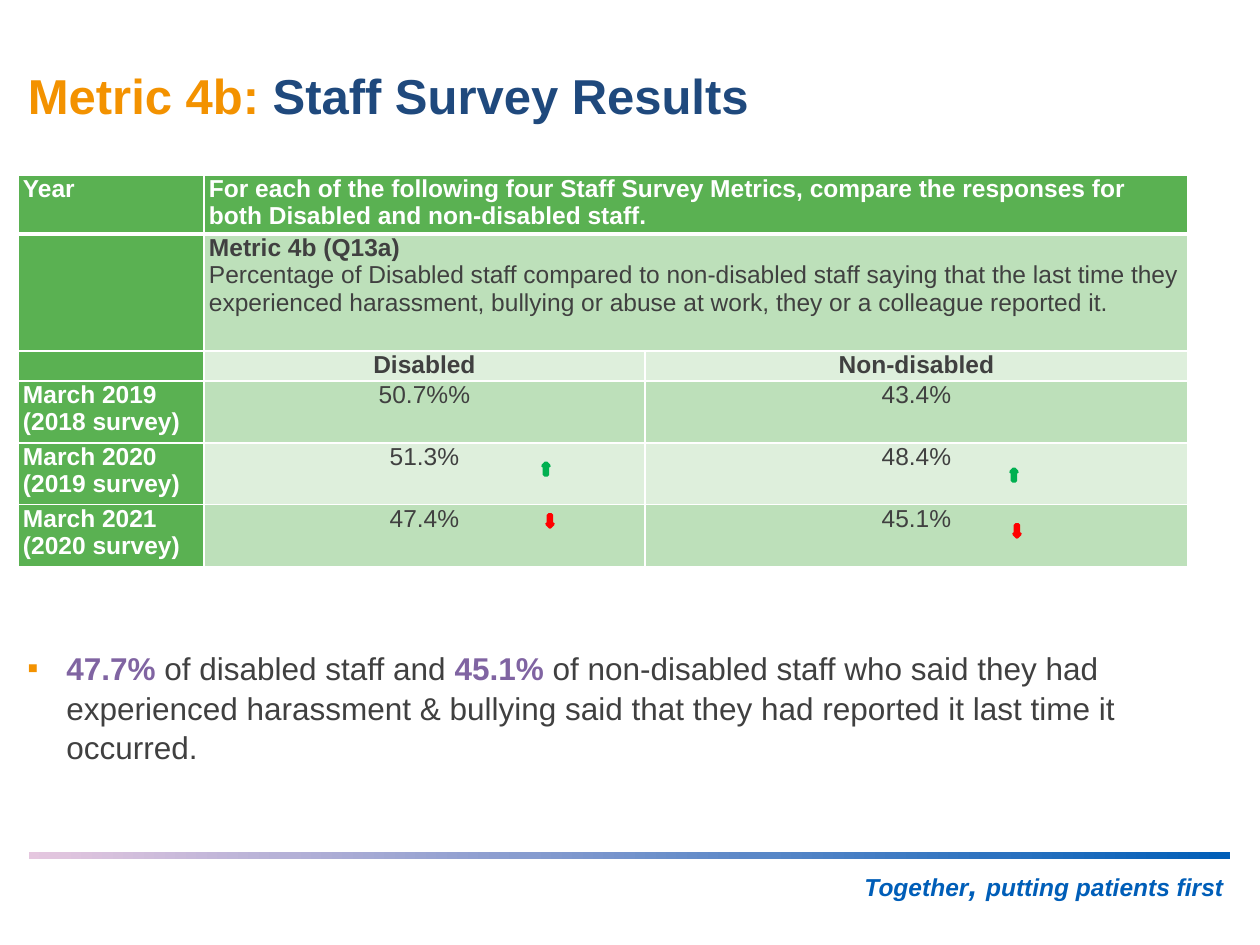
from dataclasses import dataclass
from lxml.etree import SubElement
from pptx import Presentation
from pptx.dml.color import RGBColor
from pptx.enum.shapes import MSO_SHAPE
from pptx.enum.text import MSO_ANCHOR, PP_ALIGN
from pptx.oxml.ns import qn
from pptx.util import Pt

SCALE = 914400 / 126  # EMU in one px


def px(n: int) -> int:
    return round(n * SCALE)


@dataclass(frozen=True)
class Theme:
    font: str = "Arial"
    white: str = "FFFFFF"
    text: str = "404040"
    orange: str = "F39200"
    navy: str = "1F497D"
    purple: str = "8064A2"
    blue: str = "005EB8"
    pink: str = "E5C7DF"
    dark: str = "5AB152"
    mid: str = "BDE0BA"
    pale: str = "DEEFDC"
    up: str = "00B050"
    down: str = "FF0000"
    title: int = 28
    body: int = 18
    small: int = 14


T = Theme()


@dataclass(frozen=True)
class Run:
    text: str
    color: str = T.text
    size: int = T.small
    bold: bool = False
    slant: bool = False


@dataclass(frozen=True)
class Box:
    left: int
    top: int
    width: int
    height: int

    def emu(self) -> list[int]:
        return [px(n) for n in (self.left, self.top, self.width, self.height)]


@dataclass(frozen=True)
class Trend:
    left: int
    top: int
    rise: bool


@dataclass(frozen=True)
class Row:
    height: int
    fill: str
    head: tuple[str, ...]
    cells: tuple[tuple[Run, ...], ...]  # one run per paragraph
    center: bool = True


def rgb(code: str) -> RGBColor:
    return RGBColor.from_string(code)


def add_runs(para, runs: list[Run]) -> None:
    for item in runs:
        run = para.add_run()
        run.text = item.text
        font = run.font
        font.name, font.size = T.font, Pt(item.size)
        font.bold, font.italic = item.bold, item.slant
        font.color.rgb = rgb(item.color)


def add_text(slide, box: Box, runs: list[Run]):
    frame = slide.shapes.add_textbox(*box.emu()).text_frame
    frame.word_wrap = True
    add_runs(frame.paragraphs[0], runs)
    return frame


def add_bullet(para, indent: int) -> None:
    props = para._p.get_or_add_pPr()
    props.set("marL", str(px(indent)))
    props.set("indent", str(-px(indent)))
    SubElement(SubElement(props, qn("a:buClr")), qn("a:srgbClr"), val=T.orange)
    SubElement(props, qn("a:buFont"), typeface=T.font)
    SubElement(props, qn("a:buChar"), char="▪")


def add_trend(slide, trend: Trend) -> None:
    kind = MSO_SHAPE.UP_ARROW if trend.rise else MSO_SHAPE.DOWN_ARROW
    color = rgb(T.up if trend.rise else T.down)
    box = Box(trend.left, trend.top, 6, 12)
    arrow = slide.shapes.add_shape(kind, *box.emu())
    arrow.shadow.inherit = False
    arrow.fill.solid()
    arrow.fill.fore_color.rgb = color
    arrow.line.color.rgb = color
    arrow.line.width = Pt(2)


def set_edges(cell, top: int, bottom: int) -> None:
    props = cell._tc.get_or_add_tcPr()
    for side, width in (("L", 1), ("R", 1), ("T", top), ("B", bottom)):
        line = SubElement(props, qn(f"a:ln{side}"), w=str(Pt(width)))
        SubElement(SubElement(line, qn("a:solidFill")), qn("a:srgbClr"), val=T.white)


def fill_cell(cell, runs: tuple[Run, ...], color: str, center: bool) -> None:
    cell.margin_left = cell.margin_right = px(5)
    cell.margin_top = cell.margin_bottom = 0
    cell.fill.solid()
    cell.fill.fore_color.rgb = rgb(color)
    frame = cell.text_frame
    frame.paragraphs[0].font.size = Pt(T.small)
    for i, run in enumerate(runs):
        para = frame.add_paragraph() if i else frame.paragraphs[0]
        para.alignment = PP_ALIGN.CENTER if center else PP_ALIGN.LEFT
        add_runs(para, [run])


def add_grid(slide, left: int, top: int, cols: list[int], rows: list[Row]) -> None:
    box = Box(left, top, sum(cols), sum(row.height for row in rows))
    table = slide.shapes.add_table(len(rows), len(cols), *box.emu()).table
    for col, width in zip(table.columns, cols):
        col.width = px(width)
    for r, row in enumerate(rows):
        table.rows[r].height = px(row.height)
        head = tuple(Run(line, T.white, bold=True) for line in row.head)
        parts = (head, *row.cells)
        for c in range(len(cols)):
            cell = table.cell(r, c)
            set_edges(cell, 3 if r == 1 else 1, 3 if r == 0 else 1)
            runs = parts[c] if c < len(parts) else ()
            fill_cell(cell, runs, row.fill if c else T.dark, row.center and c > 0)
        if len(parts) < len(cols):
            table.cell(r, 1).merge(table.cell(r, len(cols) - 1))


def year(fill: str, head: tuple[str, ...], *rates: str) -> Row:
    return Row(62, fill, head, tuple((Run(rate),) for rate in rates))


ROWS = [
    Row(58, T.dark, ("Year",), ((Run(
        "For each of the following four Staff Survey Metrics, compare the "
        "responses for both Disabled and non-disabled staff.", T.white, bold=True),),), False),
    Row(117, T.mid, (), ((Run("Metric 4b (Q13a)", bold=True), Run(
        "Percentage of Disabled staff compared to non-disabled staff saying that "
        "the last time they experienced harassment, bullying or abuse at work, "
        "they or a colleague reported it.")),), False),
    Row(30, T.pale, (), ((Run("Disabled", bold=True),), (Run("Non-disabled", bold=True),))),
    year(T.mid, ("March 2019", "(2018 survey)"), "50.7%%", "43.4%"),
    year(T.pale, ("March 2020 (2019 survey)",), "51.3%", "48.4%"),
    year(T.mid, ("March 2021", "(2020 survey)"), "47.4%", "45.1%"),
]
TRENDS = [Trend(547, 515, False), Trend(543, 463, True),
          Trend(1011, 469, True), Trend(1014, 525, False)]


def main() -> None:
    deck = Presentation()
    deck.slide_width, deck.slide_height = px(1260), px(945)
    slide = deck.slides.add_slide(deck.slide_layouts[6])

    # Footer motto and gradient rule
    motto = add_text(slide, Box(837, 859, 399, 50), [
        Run("Together", T.blue, bold=True, slant=True),
        Run(", ", T.blue, T.body, True, True),
        Run("putting patients first", T.blue, bold=True, slant=True)])
    motto.paragraphs[0].alignment = PP_ALIGN.RIGHT
    rule = slide.shapes.add_shape(MSO_SHAPE.RECTANGLE, *Box(29, 852, 1201, 7).emu())
    rule.shadow.inherit = False
    rule.line.fill.background()
    rule.fill.gradient()
    rule.fill.gradient_angle = 0
    for stop, color, place in zip(rule.fill.gradient_stops, (T.pink, T.blue), (0, 1)):
        stop.color.rgb, stop.position = rgb(color), place

    # Title
    title = add_text(slide, Box(2, 16, 1014, 158), [
        Run("Metric 4b: ", T.orange, T.title, True),
        Run("Staff Survey Results", T.navy, T.title, True)])
    title.margin_left = px(26)
    title.vertical_anchor = MSO_ANCHOR.MIDDLE

    # Finding below the table
    note = add_text(slide, Box(15, 641, 1181, 204), [
        Run("47.7% ", T.purple, T.body, True),
        Run("of disabled staff and ", size=T.body),
        Run("45.1% ", T.purple, T.body, True),
        Run("of non-disabled staff who said they had experienced harassment & bullying "
            "said that they had reported it last time it occurred.", size=T.body)])
    add_bullet(note.paragraphs[0], 39)
    note.paragraphs[0].line_spacing = 1.05

    # Survey table and its trend arrows
    add_grid(slide, 18, 175, [186, 441, 543], ROWS)
    for trend in TRENDS:
        add_trend(slide, trend)

    deck.save("out.pptx")


if __name__ == "__main__":
    main()
